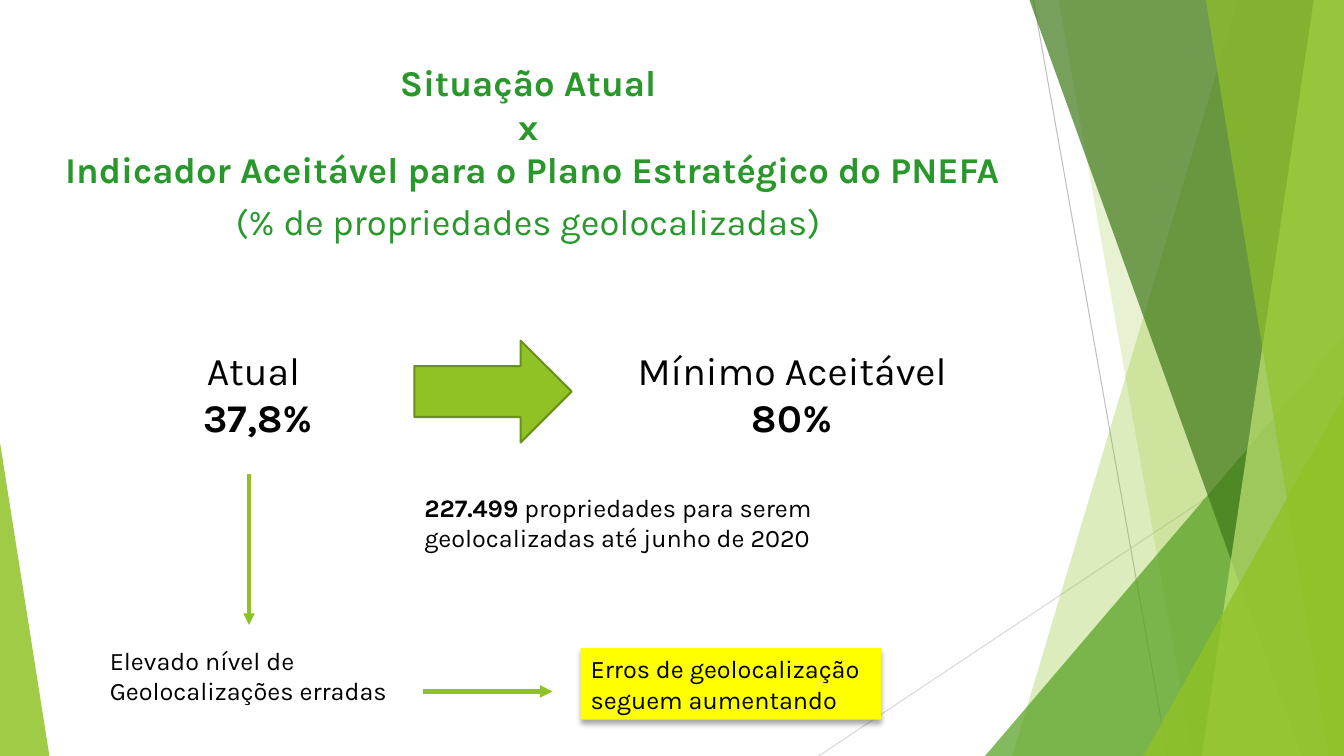
from dataclasses import dataclass

from lxml import etree
from pptx import Presentation
from pptx import util as u
from pptx.dml import color
from pptx.enum import shapes, text
from pptx.oxml import ns

PX = 9144  # EMU per px, 100 px to the inch
WIDTH, HEIGHT = 1333, 750
FONT = "Karla"
COLORS = {
    "lime": "90C226", "lime_dark": "6B901C", "pale": "C0E474", "green": "54A021",
    "forest": "3F7819", "title": "29972C", "black": "000000", "yellow": "FFFF00",
    "gray": "BFBFBF", "light_gray": "D9D9D9",
}


@dataclass(frozen=True)
class Band:
    """Stripe running from its slanted left edge to the right side of the slide."""
    top_x: int
    bottom_x: int
    fill: str
    opacity: int


@dataclass(frozen=True)
class Corner:
    """Triangle standing on the bottom of the slide, peak at 0 (left) or 1 (right)."""
    left: int
    top: int
    width: int
    peak: int
    fill: str
    opacity: int


@dataclass(frozen=True)
class Line:
    start: tuple[int, int]
    end: tuple[int, int]
    stroke: str
    weight: float
    arrow: bool = False


@dataclass(frozen=True)
class Run:
    words: str
    bold: bool = False


@dataclass(frozen=True)
class Label:
    area: tuple[int, int, int, int]
    size: int
    paragraphs: list[list[Run]]
    centered: bool = False
    ink: str = "black"


BACKDROP = [
    Line((1025, 0), (1158, 750), "gray", 0.75),
    Line((1333, 403), (812, 750), "light_gray", 0.75),
    Band(1228, 1004, "lime", 30),
    Band(1050, 1183, "lime", 20),
    Corner(977, 333, 356, 1, "green", 72),
    Band(1021, 1291, "forest", 70),
    Band(1303, 1192, "pale", 70),
    Band(1196, 1318, "lime", 65),
    Corner(1134, 393, 199, 1, "lime", 80),
    Corner(0, 439, 49, 0, "lime", 85),
]
TITLE = Label((23, 88, 1011, 125), 26, [
    [Run("Situação Atual ", True)],
    [Run("x ", True)],
    [Run("Indicador Aceitável para o Plano Estratégico do PNEFA", True)],
    [Run("(% de propriedades geolocalizadas) ")],
], centered=True, ink="title")
LABELS = [
    Label((115, 339, 282, 104), 28, [[Run("Atual ")], [Run("37,8%", True)]], centered=True),
    Label((620, 339, 331, 104), 28, [[Run("Mínimo Aceitável")], [Run("80%", True)]], centered=True),
    Label((411, 483, 577, 71), 18, [
        [Run("227.499", True), Run(" propriedades para serem geolocalizadas até junho de 2020")]]),
    Label((99, 635, 351, 71), 18, [[Run("Elevado nível de Geolocalizações erradas")]]),
]
WARNING = Label((576, 643, 298, 71), 18, [[Run("Erros de geolocalização seguem aumentando")]])
ARROWS = [
    Line((247, 470), (247, 620), "lime", 2.75, True),
    Line((420, 686), (548, 686), "lime", 3, True),
]


def rgb(name: str) -> color.RGBColor:
    return color.RGBColor.from_string(COLORS[name])


def emu(*lengths: int) -> list[int]:
    return [length * PX for length in lengths]


def add_child(parent, tag: str, **attributes):
    return etree.SubElement(parent, ns.qn(tag), attributes)


def paint(shape, fill: str, opacity: int = 100) -> None:
    """Give a shape a plain fill with neither outline nor shadow."""
    shape.fill.solid()
    shape.fill.fore_color.rgb = rgb(fill)
    shape.line.fill.background()
    shape.shadow.inherit = False
    if opacity < 100:
        tint = shape.fill._xPr.find(".//" + ns.qn("a:srgbClr"))
        add_child(tint, "a:alpha", val=str(opacity * 1000))


def draw_band(page, band: Band) -> None:
    builder = page.shapes.build_freeform(band.top_x, 0, scale=PX)
    builder.add_line_segments([(WIDTH, 0), (WIDTH, HEIGHT), (band.bottom_x, HEIGHT)])
    paint(builder.convert_to_shape(), band.fill, band.opacity)


def draw_corner(page, corner: Corner) -> None:
    triangle = page.shapes.add_shape(
        shapes.MSO_SHAPE.ISOSCELES_TRIANGLE,
        *emu(corner.left, corner.top, corner.width, HEIGHT - corner.top))
    triangle.adjustments[0] = corner.peak
    paint(triangle, corner.fill, corner.opacity)


def draw_line(page, line: Line) -> None:
    connector = page.shapes.add_connector(
        shapes.MSO_CONNECTOR.STRAIGHT, *emu(*line.start, *line.end))
    connector.line.color.rgb = rgb(line.stroke)
    connector.line.width = u.Pt(line.weight)
    if line.arrow:
        add_child(connector.line._get_or_add_ln(), "a:tailEnd", type="triangle")
    add_child(connector._element.spPr, "a:effectLst")


def write(shape, label: Label) -> None:
    frame = shape.text_frame
    frame.word_wrap = True
    for index, runs in enumerate(label.paragraphs):
        para = frame.add_paragraph() if index else frame.paragraphs[0]
        para.alignment = text.PP_ALIGN.CENTER if label.centered else text.PP_ALIGN.LEFT
        for run in runs:
            span = para.add_run()
            span.text = run.words
            span.font.name = FONT
            span.font.size = u.Pt(label.size)
            span.font.bold = run.bold
            span.font.color.rgb = rgb(label.ink)


def draw_label(page, label: Label):
    box = page.shapes.add_textbox(*emu(*label.area))
    write(box, label)
    return box


def draw_title(page) -> None:
    frame = draw_label(page, TITLE).text_frame
    frame.vertical_anchor = text.MSO_ANCHOR.MIDDLE
    frame.paragraphs[2].space_after = u.Pt(6)


def draw_block_arrow(page) -> None:
    arrow = page.shapes.add_shape(shapes.MSO_SHAPE.RIGHT_ARROW, *emu(411, 338, 156, 101))
    paint(arrow, "lime")
    arrow.line.color.rgb = rgb("lime_dark")
    arrow.line.width = u.Pt(1.5)


def draw_warning(page) -> None:
    box = page.shapes.add_shape(shapes.MSO_SHAPE.RECTANGLE, *emu(*WARNING.area))
    paint(box, "yellow")
    write(box, WARNING)
    effects = box._element.spPr.find(ns.qn("a:effectLst"))
    shadow = add_child(effects, "a:outerShdw", blurRad=str(u.Pt(4)), dist=str(u.Pt(3)),
                       dir="5400000", rotWithShape="0")
    tint = add_child(shadow, "a:srgbClr", val=COLORS["black"])
    add_child(tint, "a:alpha", val="35000")


def main() -> None:
    deck = Presentation()
    deck.slide_width, deck.slide_height = emu(WIDTH, HEIGHT)
    page = deck.slides.add_slide(deck.slide_layouts[6])
    painters = {Band: draw_band, Corner: draw_corner, Line: draw_line}
    for part in BACKDROP:
        painters[type(part)](page, part)
    draw_title(page)
    for label in LABELS:
        draw_label(page, label)
    draw_block_arrow(page)
    for arrow in ARROWS:
        draw_line(page, arrow)
    draw_warning(page)
    deck.save("out.pptx")


if __name__ == "__main__":
    main()
